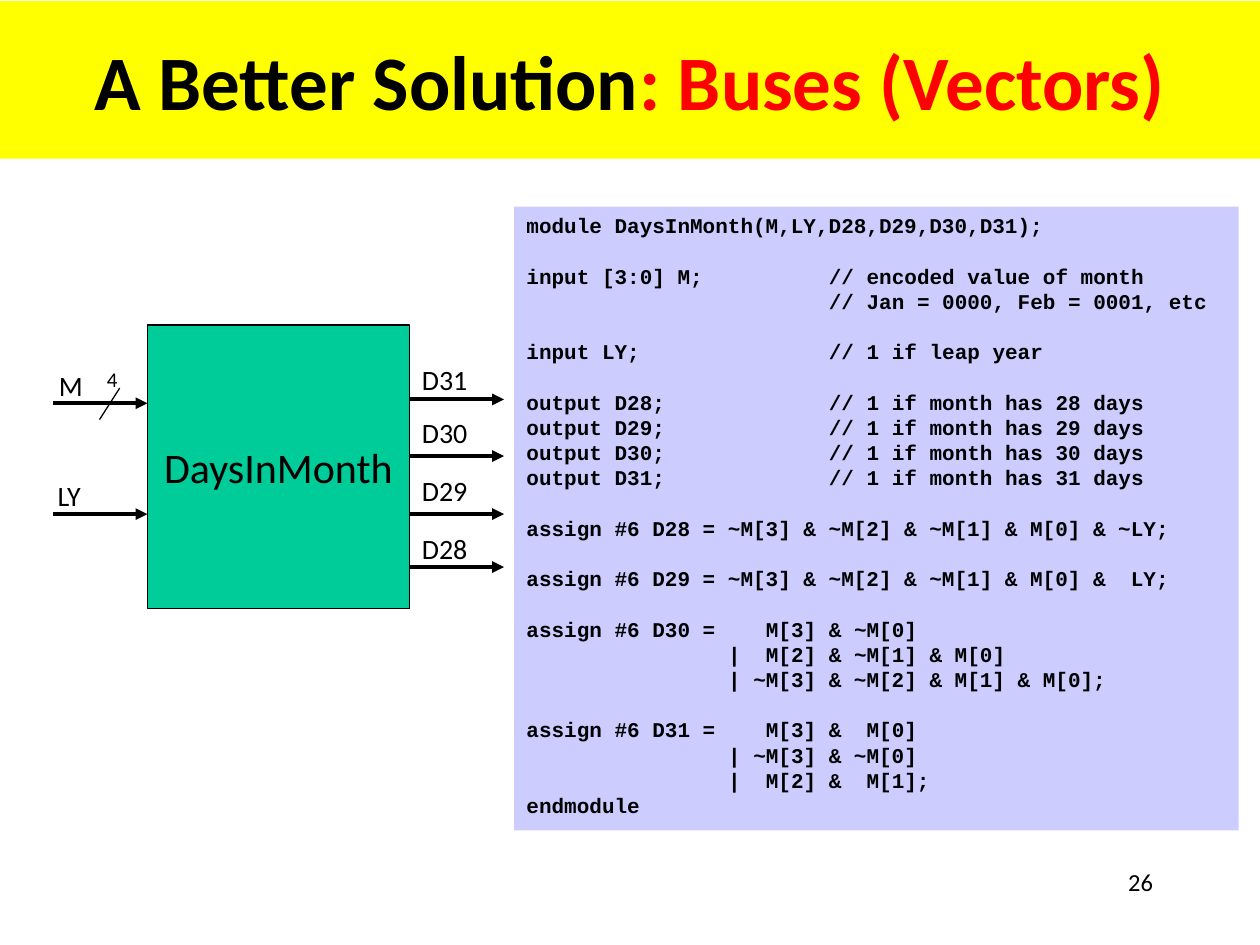
from pptx import Presentation
from pptx.dml.color import RGBColor
from pptx.enum.shapes import MSO_CONNECTOR, MSO_SHAPE
from pptx.enum.text import MSO_ANCHOR, PP_ALIGN
from pptx.oxml.ns import qn
from pptx.util import Inches, Pt
from lxml.etree import SubElement

BLACK, RED, YELLOW = "000000", "FF0000", "FFFF00"
GREEN, LAVENDER = "00CC99", "CCCCFF"
SANS, MONO = "Calibri", "Courier New"
BOX_LEFT, BOX_RIGHT, ARROW = 1.17, 3.25, 0.75
LINE_PITCH = Pt(14.4)

# Code sections: tab stops in inches, then lines
CODE = [
    ([], ["module DaysInMonth(M,LY,D28,D29,D30,D31);"]),
    ([2.4], ["input [3:0] M;\t// encoded value of month",
             "\t// Jan = 0000, Feb = 0001, etc"]),
    ([2.4], ["input LY;\t// 1 if leap year"]),
    ([2.4], [f"output D{n};\t// 1 if month has {n} days" for n in range(28, 32)]),
    ([], ["assign #6 D28 = ~M[3] & ~M[2] & ~M[1] & M[0] & ~LY;"]),
    ([], ["assign #6 D29 = ~M[3] & ~M[2] & ~M[1] & M[0] &  LY;"]),
    ([1.6, 1.9], ["assign #6 D30 =\t\tM[3] & ~M[0]",
                  "\t|\tM[2] & ~M[1] & M[0]",
                  "\t| ~M[3] & ~M[2] & M[1] & M[0];"]),
    ([1.6, 1.9], ["assign #6 D31 =\t\tM[3] &  M[0]",
                  "\t| ~M[3] & ~M[0]",
                  "\t|\tM[2] &  M[1];",
                  "endmodule"]),
]


def rgb(color):
    return RGBColor.from_string(color)


def style(r, size, font=SANS, color=BLACK, bold=False):
    r.font.size = Pt(size)
    r.font.name = font
    r.font.color.rgb = rgb(color)
    r.font.bold = bold


def add_title(s, parts):
    sp = s.shapes.title
    sp.left, sp.top = Inches(0), Inches(0.01)
    sp.width, sp.height = Inches(10), Inches(1.25)
    sp.fill.solid()
    sp.fill.fore_color.rgb = rgb(YELLOW)
    sp.text_frame.vertical_anchor = MSO_ANCHOR.MIDDLE
    p = sp.text_frame.paragraphs[0]
    p.alignment = PP_ALIGN.CENTER
    for text, color in parts:
        r = p.add_run()
        r.text = text
        style(r, 44, color=color, bold=True)


def add_box(s, x, y, w, h, fill, outlined=False):
    sp = s.shapes.add_shape(MSO_SHAPE.RECTANGLE, Inches(x), Inches(y), Inches(w), Inches(h))
    sp.shadow.inherit = False
    sp.fill.solid()
    sp.fill.fore_color.rgb = rgb(fill)
    if outlined:
        sp.line.color.rgb = rgb(BLACK)
        sp.line.width = Pt(0.75)
    else:
        sp.line.fill.background()
    return sp


def add_label(s, text, x, y, w, h=0.37, size=16, align=PP_ALIGN.LEFT, wrap=False):
    tf = s.shapes.add_textbox(Inches(x), Inches(y), Inches(w), Inches(h)).text_frame
    tf.word_wrap = wrap
    tf.text = text
    p = tf.paragraphs[0]
    p.alignment = align
    style(p.runs[0], size)


def add_line(s, x1, y1, x2, y2, width=0.75, arrow=False):
    line = s.shapes.add_connector(MSO_CONNECTOR.STRAIGHT, Inches(x1), Inches(y1),
                                  Inches(x2), Inches(y2))
    line.line.color.rgb = rgb(BLACK)
    line.line.width = Pt(width)
    if arrow:
        SubElement(line.line._get_or_add_ln(), qn("a:tailEnd"), type="triangle")
    SubElement(line._element.spPr, qn("a:effectLst"))


def add_signal(s, x, y):
    add_line(s, x, y, x + ARROW, y, 2.25, arrow=True)


def set_tabs(p, stops):
    tabs = SubElement(p._p.get_or_add_pPr(), qn("a:tabLst"))
    for stop in stops:
        SubElement(tabs, qn("a:tab"), pos=str(Inches(stop)), algn="l")


def add_code(s):
    tf = add_box(s, 4.08, 1.64, 5.75, 4.95, LAVENDER).text_frame
    tf.word_wrap = True
    tf.vertical_anchor = MSO_ANCHOR.TOP
    p = tf.paragraphs[0]
    for section, (stops, lines) in enumerate(CODE):
        for row, text in enumerate(lines):
            if section or row:
                p = tf.add_paragraph()
            p.text = text
            p.alignment = PP_ALIGN.LEFT
            p.line_spacing = LINE_PITCH
            p.space_before = LINE_PITCH if section and row == 0 else Pt(0)
            if stops:
                set_tabs(p, stops)
            style(p.runs[0], 12, MONO, bold=True)


def add_diagram(s):
    # Module block
    tf = add_box(s, BOX_LEFT, 2.58, BOX_RIGHT - BOX_LEFT, 2.25, GREEN, outlined=True).text_frame
    tf.word_wrap = False
    tf.vertical_anchor = MSO_ANCHOR.MIDDLE
    tf.text = "DaysInMonth"
    tf.paragraphs[0].alignment = PP_ALIGN.CENTER
    style(tf.paragraphs[0].runs[0], 24)

    # Inputs, with the bus width mark on M
    for name, x, y, w, line_y in [("M", 0.37, 2.88, 0.4, 3.2), ("LY", 0.36, 3.75, 0.39, 4.08)]:
        add_signal(s, BOX_LEFT - ARROW, line_y)
        add_label(s, name, x, y, w)
    add_line(s, 0.95, 3.08, 0.79, 3.33)
    add_label(s, "4", 0.75, 2.86, 0.29, 0.3, size=12)

    # Outputs
    for name, y, line_y in [("D31", 2.83, 3.17), ("D30", 3.25, 3.62),
                            ("D29", 3.71, 4.08), ("D28", 4.17, 4.5)]:
        add_signal(s, BOX_RIGHT, line_y)
        add_label(s, name, BOX_RIGHT, y, 0.59)


def main():
    prs = Presentation()
    prs.slide_width, prs.slide_height = Inches(10), Inches(7.5)
    s = prs.slides.add_slide(prs.slide_layouts[5])
    add_title(s, [("A Better Solution", BLACK), (": Buses (Vectors)", RED)])
    add_diagram(s)
    add_code(s)
    # Page number
    add_label(s, "26", 7.17, 6.83, 2.08, 0.5, size=14, align=PP_ALIGN.RIGHT, wrap=True)
    prs.save("out.pptx")


if __name__ == "__main__":
    main()
